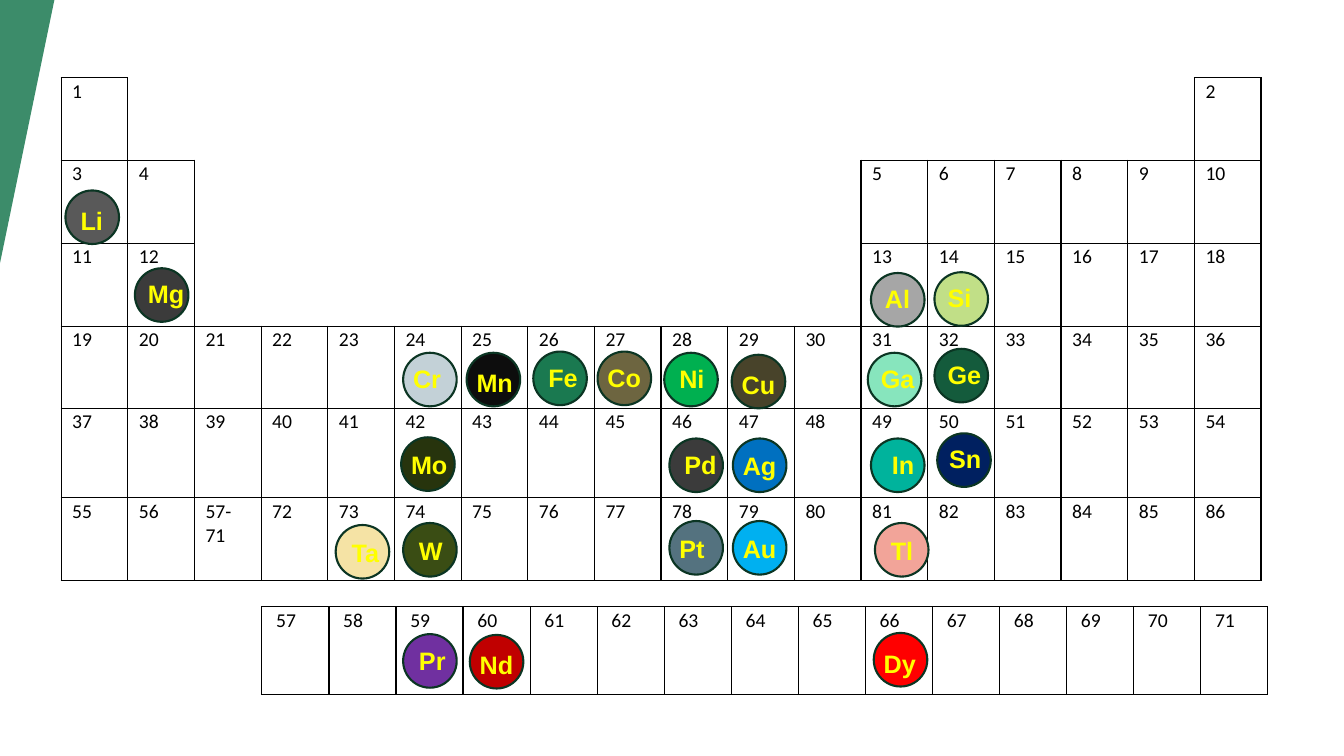
from typing import NamedTuple

from lxml.etree import SubElement
from pptx import Presentation
from pptx.dml.color import RGBColor
from pptx.enum.shapes import MSO_SHAPE
from pptx.oxml.ns import qn
from pptx.util import Cm, Pt

COLUMN_COUNT = 18
DISC_SIZE = 1.35
OUTLINE = "0B3523"
SYMBOL_COLOUR = "FFFF00"


class Disc(NamedTuple):
    """A coloured element marker, with the offset of its symbol, in cm."""

    symbol: str
    left: float
    top: float
    fill: str
    shift_x: float
    shift_y: float


class Grid(NamedTuple):
    """A table of atomic numbers, in cm; an empty string is an open cell."""

    left: float
    top: float
    column_width: float
    row_heights: list[float]
    side_margin: float
    rows: list[list[str]]


DISCS = [
    Disc("Li", 1.65, 4.8, "595959", 0.13, 0.25),
    Disc("Mg", 3.4, 6.76, "3B3B3B", 0.08, 0.13),
    Disc("Al", 21.95, 6.88, "A6A6A6", 0.1, 0.13),
    Disc("Fe", 13.44, 8.86, "1A7950", 0.13, 0.15),
    Disc("Co", 15.06, 8.86, "6D6540", 0, 0.15),
    Disc("Cu", 18.44, 8.94, "48432A", 0, 0.25),
    Disc("Ni", 16.74, 8.89, "00B050", 0.13, 0.15),
    Disc("Cr", 10.16, 8.89, "C3D1D7", 0, 0.15),
    Disc("Mn", 11.76, 8.89, "0D0D0D", 0, 0.23),
    Disc("Ag", 18.47, 11.05, "0070C0", 0, 0.18),
    Disc("Au", 18.47, 13.13, "00B0F0", 0, 0.18),
    Disc("Ga", 21.87, 8.89, "87E5BD", 0.08, 0.13),
    Disc("Tl", 22.05, 13.18, "F2A499", 0.15, 0.18),
    Disc("In", 21.95, 11.05, "00B39C", 0.28, 0.15),
    Disc("Si", 23.55, 6.86, "C1DF87", 0.08, 0.13),
    Disc("Ge", 23.55, 8.79, "145B3C", 0.08, 0.13),
    Disc("Sn", 23.62, 10.92, "002060", 0.05, 0.13),
    Disc("Pd", 16.87, 11.05, "3B3B3B", 0.13, 0.15),
    Disc("Pt", 16.87, 13.13, "54727F", 0, 0.18),
    Disc("Mo", 10.11, 11.02, "27340D", 0, 0.18),
    Disc("W", 10.16, 13.18, "3A4D14", 0.15, 0.18),
    Disc("Pr", 10.16, 15.98, "7030A0", 0.15, 0.15),
    Disc("Nd", 11.84, 16, "C00000", 0, 0.23),
    Disc("Dy", 22.02, 15.95, "FF0000", 0, 0.25),
    Disc("Ta", 8.46, 13.23, "F5E3A5", 0.15, 0.18),
]


def colour(code: str) -> RGBColor:
    """Turn a hex string into a colour."""
    return RGBColor.from_string(code)


def numbers(first: int, last: int) -> list[str]:
    """List the atomic numbers from first to last as text."""
    return [str(number) for number in range(first, last + 1)]


def period(first: int, last: int, left_count: int) -> list[str]:
    """Spread a period over the columns, with the gap after its left block."""
    filled = numbers(first, last)
    gap = [""] * (COLUMN_COUNT - len(filled))
    return filled[:left_count] + gap + filled[left_count:]


def add_run(paragraph, text: str, font_name: str, size: int, code: str, bold: bool = False) -> None:
    """Add one formatted run to a paragraph."""
    run = paragraph.add_run()
    run.text = text
    run.font.name = font_name
    run.font.size = Pt(size)
    run.font.bold = bold
    run.font.color.rgb = colour(code)


def set_borders(cell, edges: dict[str, bool]) -> None:
    """Draw the marked cell edges in black and clear the others."""
    properties = cell._tc.get_or_add_tcPr()
    for position, (tag, drawn) in enumerate(edges.items()):
        line = SubElement(properties, qn(f"a:{tag}"), w=str(Pt(1)))
        if drawn:
            solid = SubElement(line, qn("a:solidFill"))
            SubElement(solid, qn("a:srgbClr"), val="000000")
        else:
            SubElement(line, qn("a:noFill"))
        properties.insert(position, line)


def add_grid(slide, grid: Grid) -> None:
    """Draw a table whose numbered cells alone are boxed."""
    row_count, column_count = len(grid.rows), len(grid.rows[0])
    table = slide.shapes.add_table(
        row_count, column_count, Cm(grid.left), Cm(grid.top),
        Cm(grid.column_width * column_count), Cm(sum(grid.row_heights)),
    ).table
    table.first_row = False
    table.horz_banding = False
    for column in table.columns:
        column.width = Cm(grid.column_width)
    for row, height in zip(table.rows, grid.row_heights):
        row.height = Cm(height)

    def is_numbered(row: int, column: int) -> bool:
        """Tell whether a position is in the table and holds a number."""
        inside = 0 <= row < row_count and 0 <= column < column_count
        return inside and bool(grid.rows[row][column])

    for row, texts in enumerate(grid.rows):
        for column, text in enumerate(texts):
            cell = table.cell(row, column)
            cell.margin_left = cell.margin_right = Cm(grid.side_margin)
            cell.margin_top, cell.margin_bottom = Cm(0.05), Cm(0)
            cell.fill.background()
            boxed = is_numbered(row, column)
            set_borders(cell, {
                "lnL": boxed or is_numbered(row, column - 1),
                "lnR": boxed or is_numbered(row, column + 1),
                "lnT": boxed or is_numbered(row - 1, column),
                "lnB": boxed or is_numbered(row + 1, column),
            })
            if text:
                add_run(cell.text_frame.paragraphs[0], text, "Calibri", 14, "000000")


def add_disc(slide, disc: Disc) -> None:
    """Draw an element marker and its symbol as a group."""
    group = slide.shapes.add_group_shape()
    circle = group.shapes.add_shape(
        MSO_SHAPE.OVAL, Cm(disc.left), Cm(disc.top), Cm(DISC_SIZE), Cm(DISC_SIZE)
    )
    circle.shadow.inherit = False
    circle.fill.solid()
    circle.fill.fore_color.rgb = colour(disc.fill)
    circle.line.color.rgb = colour(OUTLINE)
    circle.line.width = Pt(1.5)
    label = group.shapes.add_textbox(
        Cm(disc.left + disc.shift_x), Cm(disc.top + disc.shift_y), Cm(1.6), Cm(1.02)
    )
    label.text_frame.word_wrap = True
    add_run(label.text_frame.paragraphs[0], disc.symbol, "Arial", 18, SYMBOL_COLOUR, True)


def add_corner(slide) -> None:
    """Draw the translucent green wedge at the upper left."""
    wedge = slide.shapes.add_shape(MSO_SHAPE.ISOSCELES_TRIANGLE, 0, 0, Cm(1.37), Cm(6.63))
    wedge.adjustments[0] = 1
    wedge.rotation = 180
    wedge.shadow.inherit = False
    wedge.fill.solid()
    wedge.fill.fore_color.rgb = colour("1A7950")
    wedge.line.fill.background()
    shade = wedge.fill._xPr.find(f".//{qn('a:srgbClr')}")
    SubElement(shade, qn("a:alpha"), val="85000")


def main() -> None:
    """Build the periodic table slide."""
    presentation = Presentation()
    presentation.slide_width, presentation.slide_height = Cm(33.87), Cm(19.05)
    slide = presentation.slides.add_slide(presentation.slide_layouts[6])
    add_corner(slide)
    periods = [
        period(1, 2, 1), period(3, 10, 2), period(11, 18, 2),
        period(19, 36, 18), period(37, 54, 18),
        numbers(55, 56) + ["57-71"] + numbers(72, 86),
    ]
    heights = [2.08, 2.09, 2.09, 2.07, 2.25, 2.09]
    add_grid(slide, Grid(1.54, 1.96, 1.68, heights, 0.28, periods))
    add_grid(slide, Grid(6.6, 15.29, 1.69, [2.21], 0.36, [numbers(57, 71)]))
    for disc in DISCS:
        add_disc(slide, disc)
    presentation.save("out.pptx")


if __name__ == "__main__":
    main()
